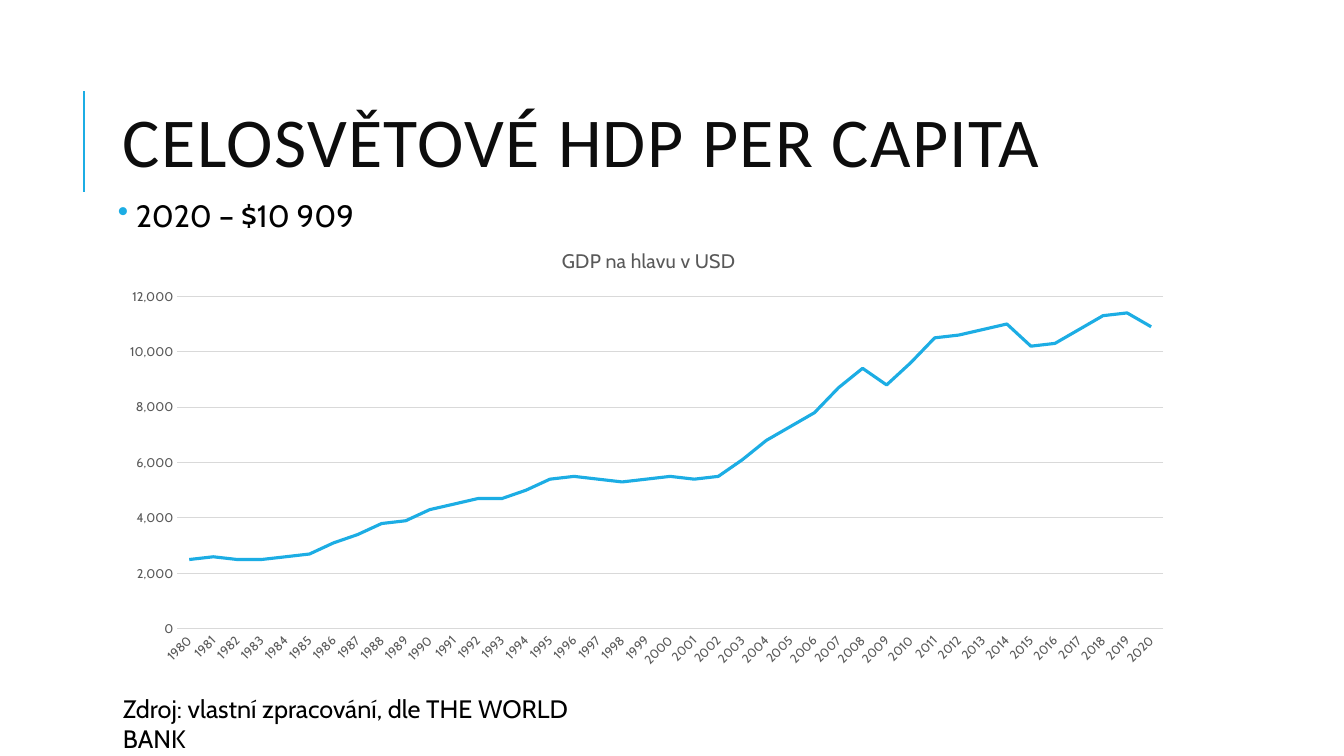
from lxml import etree
from pptx import Presentation
from pptx.chart import data
from pptx.dml.color import RGBColor
from pptx.enum import chart as kinds, shapes, text
from pptx.oxml import parse_xml
from pptx.oxml.ns import nsdecls, qn
from pptx.util import Inches, Pt

BLUE = RGBColor(0x1C, 0xAD, 0xE4)
BLACK = RGBColor(0, 0, 0)
INK = RGBColor(0x0D, 0x0D, 0x0D)
GRAY = RGBColor(0x59, 0x59, 0x59)
PALE = RGBColor(0xD9, 0xD9, 0xD9)
FONT = "Cabin"
LEFT, WIDTH = 1.12, 10.63
START = 1980
GDP = [
    2500, 2600, 2500, 2500, 2600, 2700, 3100, 3400, 3800, 3900,
    4300, 4500, 4700, 4700, 5000, 5400, 5500, 5400, 5300, 5400,
    5500, 5400, 5500, 6100, 6800, 7300, 7800, 8700, 9400, 8800,
    9600, 10500, 10600, 10800, 11000, 10200, 10300, 10800, 11300, 11400,
    10900,
]


def style(font, size, color, name=FONT):
    font.name = name
    font.size = Pt(size)
    font.color.rgb = color
    font.bold = False


def stroke(line, color, width):
    line.color.rgb = color
    line.width = Pt(width)


def add_text(slide, words, top, width, height, size, color, name=FONT):
    box = slide.shapes.add_textbox(
        Inches(LEFT), Inches(top), Inches(width), Inches(height))
    frame = box.text_frame
    frame.word_wrap = True
    para = frame.paragraphs[0]
    para.text = words
    style(para.font, size, color, name)
    return frame, para


def add_title(slide):
    frame, para = add_text(slide, "CELOSVĚTOVÉ HDP PER CAPITA",
                           0.64, WIDTH, 1.64, 50, INK, "Calibri")
    frame.vertical_anchor = text.MSO_ANCHOR.MIDDLE
    para.line_spacing = 0.8
    para.runs[0].font._element.set("spc", "100")


def add_bullet(slide):
    frame, para = add_text(slide, " 2020 – $10 909",
                           1.94, WIDTH, 4.4, 22, BLACK)
    frame.margin_left = frame.margin_right = Inches(0.05)
    frame.margin_top = frame.margin_bottom = Inches(0.05)
    para.line_spacing = 0.9
    para.space_before = Pt(12)
    para.space_after = Pt(2)
    props = para._p.get_or_add_pPr()
    props.set("marL", str(Inches(0.1)))
    props.set("indent", str(Inches(-0.1)))
    mark = parse_xml(
        f'<a:buClr {nsdecls("a")}><a:srgbClr val="{BLUE}"/></a:buClr>')
    sign = parse_xml(f'<a:buChar {nsdecls("a")} char="•"/>')
    props.find(qn("a:spcAft")).addnext(mark)
    mark.addnext(sign)


def add_rule(slide):
    rule = slide.shapes.add_connector(
        shapes.MSO_CONNECTOR.STRAIGHT,
        Inches(0.83), Inches(1.9), Inches(0.83), Inches(0.9))
    stroke(rule.line, BLUE, 1.5)
    etree.SubElement(rule._element.spPr, qn("a:effectLst"))


def set_plot(chart, x, y, width, height):
    area = chart._chartSpace.chart.plotArea
    for old in area.findall(qn("c:layout")):
        area.remove(old)
    area.insert(0, parse_xml(
        f'<c:layout {nsdecls("c")}><c:manualLayout>'
        '<c:layoutTarget val="inner"/>'
        '<c:xMode val="edge"/><c:yMode val="edge"/>'
        f'<c:x val="{x}"/><c:y val="{y}"/>'
        f'<c:w val="{width}"/><c:h val="{height}"/>'
        '</c:manualLayout></c:layout>'))


def set_axes(chart):
    years, worth = chart.category_axis, chart.value_axis
    for axis in (years, worth):
        axis.major_tick_mark = kinds.XL_TICK_MARK.NONE
        axis.minor_tick_mark = kinds.XL_TICK_MARK.NONE
        style(axis.tick_labels.font, 9, GRAY)
    stroke(years.format.line, PALE, 0.75)
    years._element.find(qn("c:txPr")).find(qn("a:bodyPr")).set(
        "rot", str(-45 * 60000))
    worth.format.line.fill.background()
    worth.minimum_scale = 0
    worth.maximum_scale = 12000
    worth.major_unit = 2000
    worth.tick_labels.number_format = "#,##0"
    worth.tick_labels.number_format_is_linked = False
    stroke(worth.major_gridlines.format.line, PALE, 0.75)


def add_graph(slide):
    table = data.CategoryChartData(number_format="#,##0")
    table.categories = [str(START + i) for i in range(len(GDP))]
    table.add_series("Series 1", GDP)
    chart = slide.shapes.add_chart(
        kinds.XL_CHART_TYPE.LINE, Inches(LEFT), Inches(2.28),
        Inches(WIDTH), Inches(4.4), table).chart
    style(chart.font, 10, BLACK)
    chart.has_legend = False
    chart.has_title = True
    head = chart.chart_title.text_frame
    head.text = "GDP na hlavu v USD"
    style(head.paragraphs[0].font, 14, GRAY)
    chart.plots[0].vary_by_categories = False
    trend = chart.plots[0].series[0]
    trend.smooth = False
    trend.marker.style = kinds.XL_MARKER_STYLE.NONE
    stroke(trend.format.line, BLUE, 2.25)
    set_axes(chart)
    set_plot(chart, 0.06, 0.15, 0.92, 0.75)


def main():
    deck = Presentation()
    deck.slide_width = Inches(13.33)
    deck.slide_height = Inches(7.5)
    slide = deck.slides.add_slide(deck.slide_layouts[6])
    add_rule(slide)
    add_title(slide)
    add_text(slide, "Zdroj: vlastní zpracování, dle THE WORLD BANK",
             6.83, 5.11, 0.71, 18, BLACK)
    add_graph(slide)
    add_bullet(slide)
    deck.save("out.pptx")


if __name__ == "__main__":
    main()
